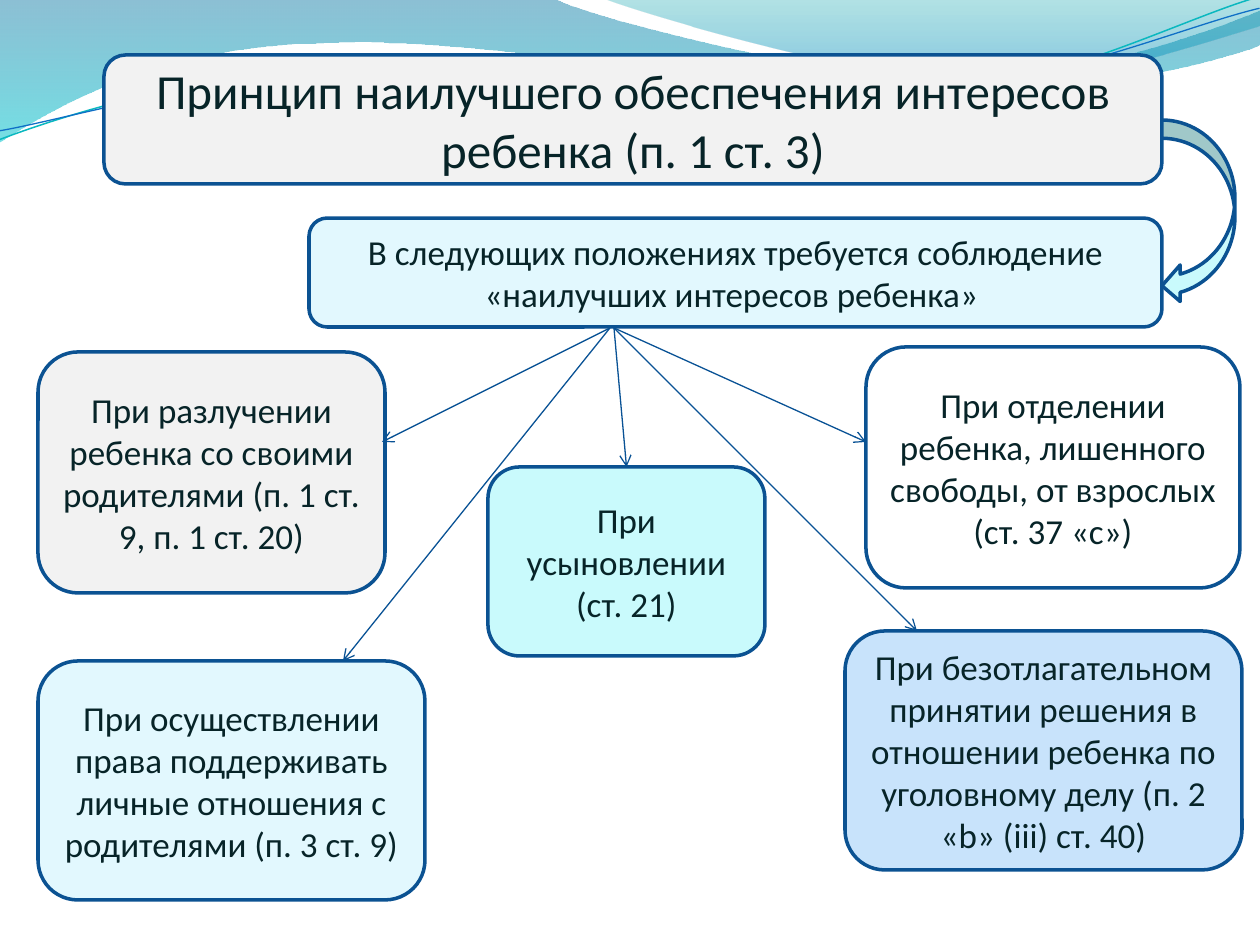
from lxml import etree
from pptx import Presentation
from pptx.dml.color import RGBColor
from pptx.enum.shapes import MSO_CONNECTOR, MSO_SHAPE
from pptx.enum.text import MSO_ANCHOR, PP_ALIGN
from pptx.oxml.ns import qn
from pptx.util import Pt

PX = 914400 // 126
ROUNDED = MSO_SHAPE.ROUNDED_RECTANGLE
CURVED_ARROW = MSO_SHAPE.CURVED_LEFT_ARROW
STRAIGHT = MSO_CONNECTOR.STRAIGHT
MIDDLE = MSO_ANCHOR.MIDDLE
CENTER = PP_ALIGN.CENTER
TOP_SIDE = 0

FONT = "Calibri"
INK = "072428"
BORDER = "0B5292"
GRAY, PALE, AQUA, WHITE, BLUE = "F2F2F2", "E2F8FE", "C9FAFC", "FFFFFF", "C8E3FB"

WAVES = [
    ([(0, 0), (554, -1),
      (600, 21, 837, 79, 955, 79), (1075, 79, 1207, 33, 1260, 11), (1261, 45),
      (1239, 55, 1096, 96, 940, 95), (784, 95, 481, 35, 324, 43),
      (163, 45, 58, 105, -1, 142)],
     [(0, "0074A1", 45), (1, "00C6CF", 55)]),
    ([(604, -1), (641, 14, 859, 78, 969, 82), (1079, 87, 1211, 40, 1260, 26), (1260, 0)],
     [(0, "00A1A9", 30), (0.8, "008BBF", 45)]),
]
STRAND_ANGLE = 357.3
STRANDS = [
    ([(-3, 110), (58, 90, 199, 52, 350, 53), (499, 53, 745, 118, 896, 114),
      (1049, 109, 1184, 45, 1260, 27)], "0AB8BF", 0.85),
    ([(-2, 101), (57, 94, 207, 57, 357, 58), (509, 58, 750, 112, 902, 108),
      (1052, 104, 1187, 52, 1262, 38)], "0F6FC6", 0.75),
]
CASES = [
    ((38, 352, 347, 241), GRAY,
     "При разлучении ребенка со своими родителями (п. 1 ст. 9, п. 1 ст. 20)"),
    ((38, 661, 387, 239), PALE,
     "При осуществлении права поддерживать личные отношения с родителями (п. 3 ст. 9)"),
    ((488, 467, 277, 189), AQUA, "При усыновлении (ст. 21)"),
    ((866, 347, 374, 241), WHITE,
     "При отделении ребенка, лишенного свободы, от взрослых (ст. 37 «с»)"),
    ((845, 631, 397, 239), BLUE,
     "При безотлагательном принятии решения в отношении ребенка по уголовному делу "
     "(п. 2 «b» (iii) ст. 40)"),
]
BRANCHES = [(610, (344, 90)), (610, (305, 0)), (614, None), (614, (0, 95)), (614, (72, 0))]


def color(value):
    """Return the colour of a hex string."""
    return RGBColor.from_string(value)


def emu(*lengths):
    """Turn px lengths into EMU."""
    return [round(length * PX) for length in lengths]


def set_line(line, value, width):
    """Give a line a colour and a width in points."""
    line.color.rgb = color(value)
    line.width = Pt(width)


def bend(shape, segments):
    """Turn each three line steps of a curved segment into one cubic curve."""
    steps = iter(list(shape.element.iter(qn("a:lnTo"))))
    for segment in segments[1:]:
        first = next(steps)
        if len(segment) == 2:
            continue
        first.tag = qn("a:cubicBezTo")
        for step in (next(steps), next(steps)):
            first.append(step[0])
            step.getparent().remove(step)


def add_outline(shapes, box, segments, close):
    """Draw a curved freeform whose points are relative to the box."""
    left, top = box[:2]
    points = [tuple(emu(left + x, top + y)) for segment in segments
              for x, y in zip(segment[::2], segment[1::2])]
    builder = shapes.build_freeform(*points[0], scale=1.0)
    builder.add_line_segments(points[1:], close=close)
    shape = builder.convert_to_shape()
    bend(shape, segments)
    shape.shadow.inherit = False
    return shape


def add_header_waves(slide, box):
    """Draw the translucent waves and thin strands of the header."""
    for segments, stops in WAVES:
        wave = add_outline(slide.shapes, box, segments, True)
        wave.line.fill.background()
        wave.fill.gradient()
        wave.fill.gradient_angle = 270
        for stop, (position, value, _) in zip(wave.fill.gradient_stops, stops):
            stop.position = position
            stop.color.rgb = color(value)
        tints = wave.element.spPr.iter(qn("a:srgbClr"))
        for tint, (_, _, opacity) in zip(tints, stops):
            etree.SubElement(tint, qn("a:alpha"), val=str(opacity * 1000))
    group = slide.shapes.add_group_shape()
    for segments, value, width in STRANDS:
        strand = add_outline(group.shapes, box, segments, False)
        strand.rotation = STRAND_ANGLE
        strand.fill.background()
        set_line(strand.line, value, width)


def add_block(slide, box, fill, kind=ROUNDED):
    """Add a filled and bordered preset shape."""
    shape = slide.shapes.add_shape(kind, *emu(*box))
    shape.shadow.inherit = False
    shape.fill.solid()
    shape.fill.fore_color.rgb = color(fill)
    set_line(shape.line, BORDER, 2)
    return shape


def add_text_block(slide, box, fill, text, size=20):
    """Add a rounded block with centred text."""
    shape = add_block(slide, box, fill)
    frame = shape.text_frame
    frame.word_wrap = True
    frame.vertical_anchor = MIDDLE
    paragraph = frame.paragraphs[0]
    paragraph.alignment = CENTER
    run = paragraph.add_run()
    run.text = text
    run.font.name = FONT
    run.font.size = Pt(size)
    run.font.color.rgb = color(INK)
    return shape


def add_heading(slide, box):
    """Place the principle, its explanation and the arrow that joins them."""
    left, top, width, height = box
    add_text_block(slide, (left, top, width, 129), GRAY,
                   "Принцип наилучшего обеспечения интересов ребенка (п. 1 ст. 3)", 28)
    add_text_block(slide, (left + 205, top + height - 109, width - 205, 109), PALE,
                   "В следующих положениях требуется соблюдение «наилучших интересов ребенка» ")
    add_block(slide, (left + width, top + 65, 73, 184), AQUA, CURVED_ARROW)


def add_cases(slide, box):
    """Place the five cases and the arrows that lead to them from the box top."""
    left, top = box[:2]
    places = [(left + x, top + y, width, height) for (x, y, width, height), _, _ in CASES]
    blocks = [add_text_block(slide, place, fill, text)
              for place, (_, fill, text) in zip(places, CASES)]
    for place, block, (start, offset) in zip(places, blocks, BRANCHES):
        x, y = offset or (place[2] // 2, 0)
        arrow = slide.shapes.add_connector(
            STRAIGHT, *emu(left + start, top + 328, place[0] + x, place[1] + y))
        if offset is None:
            arrow.end_connect(block, TOP_SIDE)
        set_line(arrow.line, "095295", 0.75)
        properties = arrow.element.spPr
        etree.SubElement(properties.find(qn("a:ln")), qn("a:tailEnd"), type="arrow")
        etree.SubElement(properties, qn("a:effectLst"))


def main():
    """Build the slide and save it."""
    presentation = Presentation()
    presentation.slide_width, presentation.slide_height = 1260 * PX, 945 * PX
    slide = presentation.slides.add_slide(presentation.slide_layouts[6])
    add_header_waves(slide, (0, 0, 1260, 142))
    add_heading(slide, (104, 55, 1058, 272))
    add_cases(slide, (0, 0, 1260, 945))
    presentation.save("out.pptx")


if __name__ == "__main__":
    main()
